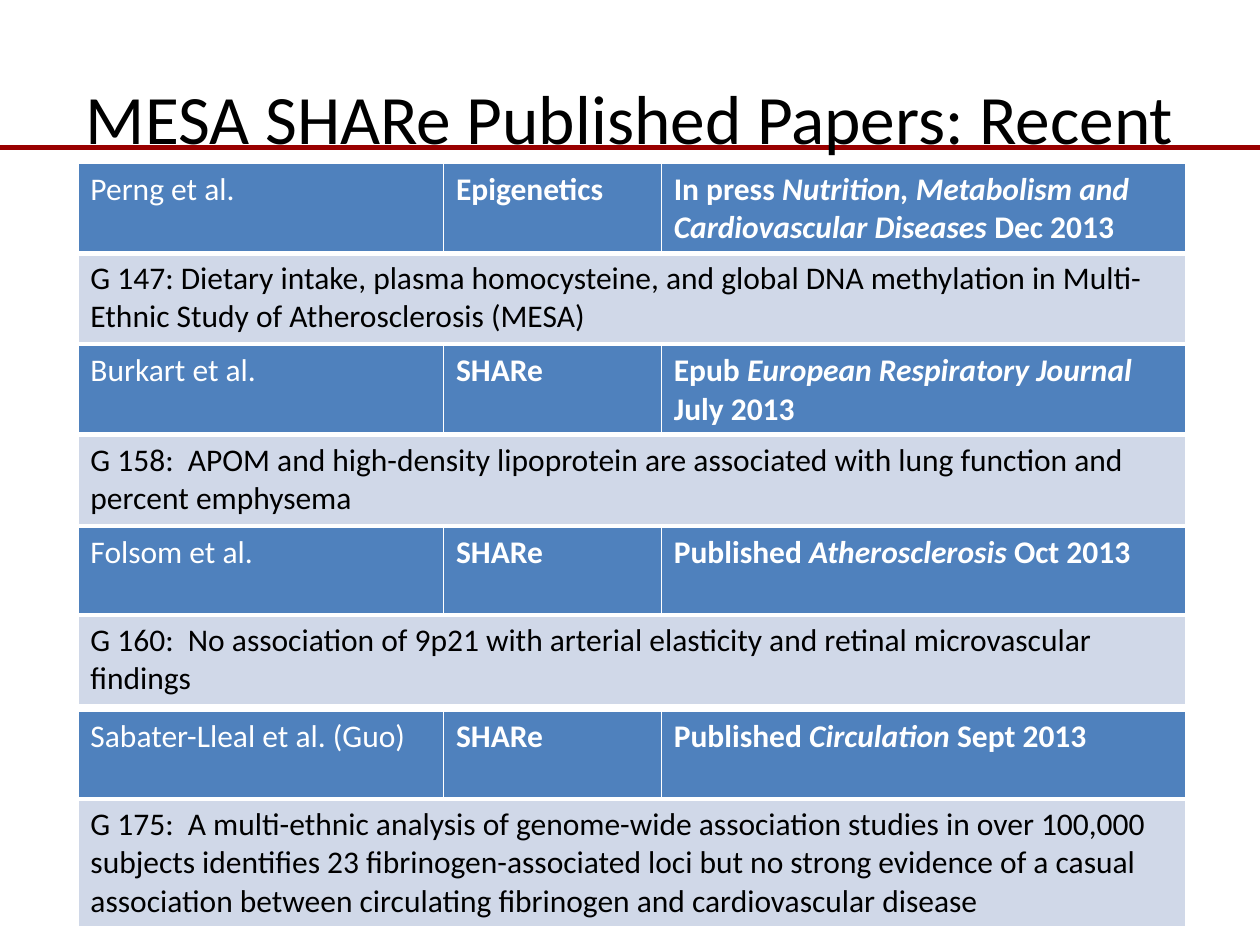
from lxml.etree import SubElement
from pptx import Presentation
from pptx.dml.color import RGBColor
from pptx.enum.shapes import MSO_CONNECTOR as CONN
from pptx.enum.text import MSO_ANCHOR as ANCHOR, MSO_AUTO_SIZE as AUTO, PP_ALIGN as ALIGN
from pptx.oxml.ns import qn
from pptx.util import Cm, Pt

WHITE = RGBColor(0xFF, 0xFF, 0xFF)
BLACK = RGBColor(0, 0, 0)
RED = RGBColor(0x99, 0, 0)
BLUE = RGBColor(0x4F, 0x81, 0xBD)
PALE = RGBColor(0xD0, 0xD8, 0xE8)
FONT = "Calibri"
COL_WIDTHS = (7.37, 4.39, 10.57)
ROW_H = 1.78
TABLE_X = 1.57

PAPERS = [
    (3.3, ROW_H, "Perng et al.", "Epigenetics",
     ("In press ", "Nutrition, Metabolism and Cardiovascular Diseases ", "Dec 2013"),
     "G 147: Dietary intake, plasma homocysteine, and global DNA methylation in "
     "Multi-Ethnic Study of Atherosclerosis (MESA)"),
    (6.96, ROW_H, "Burkart et al.", "SHARe",
     ("Epub ", "European Respiratory Journal ", "July 2013"),
     "G 158:  APOM and high-density lipoprotein are associated with lung function "
     "and percent emphysema"),
    (10.62, ROW_H, "Folsom et al.", "SHARe",
     ("Published ", "Atherosclerosis ", "Oct 2013"),
     "G 160:  No association of 9p21 with arterial elasticity and retinal "
     "microvascular findings"),
    (14.33, 2.54, "Sabater-Lleal et al. (Guo)", "SHARe",
     ("Published ", "Circulation ", "Sept 2013"),
     "G 175:  A multi-ethnic analysis of genome-wide association studies in over "
     "100,000 subjects identifies 23 fibrinogen-associated loci but no strong "
     "evidence of a casual association between circulating fibrinogen and "
     "cardiovascular disease"),
]


def add_run(p, text, color, **fmt):
    r = p.add_run()
    r.text = text
    r.font.color.rgb = color
    for key, value in {"name": FONT, "size": Pt(18), "bold": False, **fmt}.items():
        setattr(r.font, key, value)


def set_borders(cell, bottom):
    tc_pr = cell._tc.get_or_add_tcPr()
    for side, width in (("L", 1), ("R", 1), ("T", 1), ("B", bottom)):
        ln = SubElement(tc_pr, qn(f"a:ln{side}"), w=str(Pt(width)))
        fill = SubElement(ln, qn("a:solidFill"))
        SubElement(fill, qn("a:srgbClr"), val=str(WHITE))


def add_rule(s, x, y, w):
    line = s.shapes.add_connector(CONN.STRAIGHT, Cm(x), Cm(y), Cm(x + w), Cm(y))
    line.line.color.rgb = RED
    line.line.width = Pt(3)
    SubElement(line._element.spPr, qn("a:effectLst"))
    s.shapes._spTree.insert(2, line._element)


def add_title(s, x, y, w, h, text):
    sp = s.shapes.title
    box = {"left": x, "top": y, "width": w, "height": h}
    for key, value in box.items():
        setattr(sp, key, Cm(value))
    tf = sp.text_frame
    for key, value in {"word_wrap": True, "auto_size": AUTO.NONE,
                       "vertical_anchor": ANCHOR.MIDDLE}.items():
        setattr(tf, key, value)
    p = tf.paragraphs[0]
    p.alignment = ALIGN.CENTER
    add_run(p, text, BLACK, size=Pt(39.6))


def add_paper(s, x, y, title_h, author, topic, journal, title):
    frame = s.shapes.add_table(2, len(COL_WIDTHS), Cm(x), Cm(y),
                               Cm(sum(COL_WIDTHS)), Cm(ROW_H + title_h))
    table = frame.table
    for col, width in zip(table.columns, COL_WIDTHS):
        col.width = Cm(width)
    for row, height in zip(table.rows, (ROW_H, title_h)):
        row.height = Cm(height)
    table.cell(1, 0).merge(table.cell(1, 2))
    for row, color, bottom in ((0, BLUE, 3), (1, PALE, 1)):
        for cell in table.rows[row].cells:
            set_borders(cell, bottom)
            cell.fill.solid()
            cell.fill.fore_color.rgb = color
    author_p, topic_p, journal_p = (
        cell.text_frame.paragraphs[0] for cell in table.rows[0].cells)
    add_run(author_p, author, WHITE)
    add_run(topic_p, topic, WHITE, bold=True)
    for i, part in enumerate(journal):
        add_run(journal_p, part, WHITE, bold=True, italic=i == 1)
    add_run(table.cell(1, 0).text_frame.paragraphs[0], title, BLACK)


def main():
    prs = Presentation()
    prs.slide_width, prs.slide_height = Cm(25.4), Cm(19.05)
    s = prs.slides.add_slide(prs.slide_layouts[5])
    add_rule(s, 0, 2.97, 25.4)
    add_title(s, 1.27, 0.76, 22.86, 3.18, "MESA SHARe Published Papers: Recent")
    for y, title_h, *texts in PAPERS:
        add_paper(s, TABLE_X, y, title_h, *texts)
    prs.save("out.pptx")


if __name__ == "__main__":
    main()
